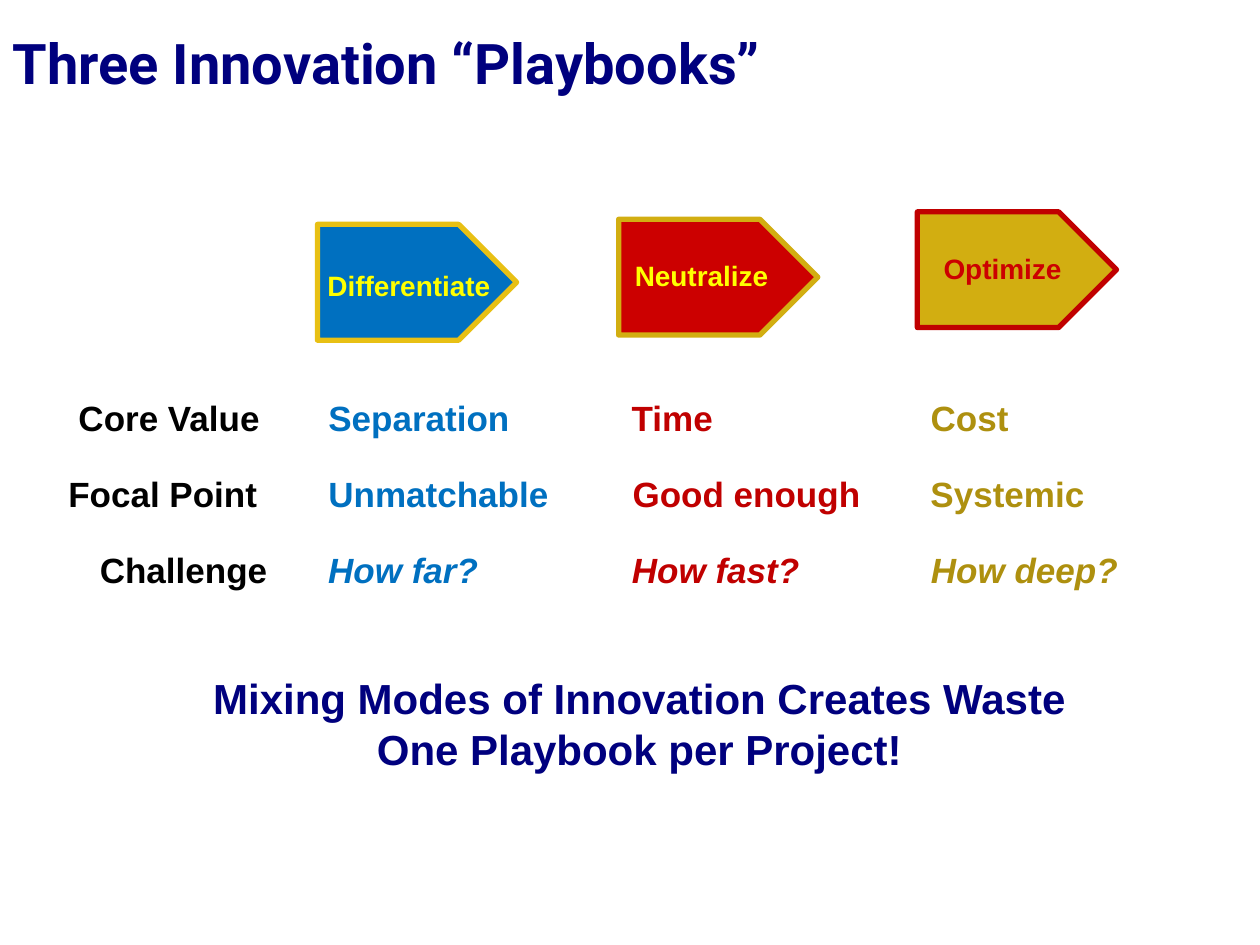
"""Build the slide comparing three innovation playbooks."""
import pptx
import pptx.dml.color
import pptx.enum.shapes
import pptx.enum.text
import pptx.oxml.ns
import pptx.util
from lxml import etree

Pt = pptx.util.Pt
ALIGN = pptx.enum.text.PP_ALIGN


def rgb(value):
    return pptx.dml.color.RGBColor.from_string(value)


def add_label(shapes, text, left, top, width, height, size, color, align, italic=None):
    label = shapes.add_textbox(Pt(left), Pt(top), Pt(width), Pt(height))
    frame = label.text_frame
    frame.text = text
    frame.word_wrap = False
    frame.auto_size = pptx.enum.text.MSO_AUTO_SIZE.SHAPE_TO_FIT_TEXT
    for paragraph in frame.paragraphs:
        paragraph.alignment = align
        for run in paragraph.runs:
            run.font.name = "Arial"
            run.font.size = Pt(size)
            run.font.bold = True
            run.font.italic = italic
            run.font.color.rgb = rgb(color)


deck = pptx.Presentation()
deck.slide_width, deck.slide_height = Pt(720), Pt(540)
slide = deck.slides.add_slide(deck.slide_layouts[5])

title = slide.shapes.title
title.left, title.top, title.width, title.height = Pt(0), Pt(17.3), Pt(672), Pt(77.8)
title.text_frame.text = "Three Innovation “Playbooks”"
title.text_frame.vertical_anchor = pptx.enum.text.MSO_ANCHOR.TOP
heading = title.text_frame.paragraphs[0]
heading.alignment = ALIGN.LEFT
heading.line_spacing = 0.9
heading_font = heading.runs[0].font
heading_font.name = "Roboto"
heading_font.size = Pt(32)
heading_font.bold = True
heading_font.color.rgb = rgb("00007E")

row_tops = [223.2, 266.4, 309.6]
criteria = [("Core Value", 36.7, 118.8), ("Focal Point", 31, 123.1), ("Challenge", 49, 110.9)]
for top, (criterion, left, width) in zip(row_tops, criteria):
    add_label(slide.shapes, criterion, left, top, width, 31.5, 20, "000000", ALIGN.RIGHT)

playbooks = [
    (180, "0070C0", [("Separation", 118.8), ("Unmatchable", 141.1), ("How far?", 100.8)]),
    (353.5, "C00000", [("Time", 61.2), ("Good enough", 146.2), ("How fast?", 110.9)]),
    (524.2, "AE900F", [("Cost", 59.8), ("Systemic", 103), ("How deep?", 122.4)]),
]
for left, color, answers in playbooks:
    for top, (answer, width) in zip(row_tops, answers):
        italic = top == row_tops[-1]
        add_label(slide.shapes, answer, left, top, width, 31.5, 20, color, ALIGN.CENTER, italic)

modes = [
    ("Differentiate", 181.4, 128.2, "0070C0", "E8C014", 180, 149.8, 108.7, "FFFF00"),
    ("Neutralize", 353.5, 125.3, "CC0000", "D2AE11", 355.7, 144, 91.4, "FFFF00"),
    ("Optimize", 524.2, 121, "D2AE11", "C00000", 532.1, 140.4, 82.8, "CC0000"),
]
for mode, left, top, fill, border, text_left, text_top, text_width, text_color in modes:
    group = slide.shapes.add_group_shape()
    arrow = group.shapes.add_shape(
        pptx.enum.shapes.MSO_SHAPE.PENTAGON, Pt(left), Pt(top), Pt(113.8), Pt(66.2))
    arrow.shadow.inherit = False
    arrow.fill.solid()
    arrow.fill.fore_color.rgb = rgb(fill)
    arrow.line.color.rgb = rgb(border)
    arrow.line.width = Pt(3)
    outline = arrow.line._get_or_add_ln()
    etree.SubElement(outline, pptx.oxml.ns.qn("a:round"))
    add_label(group.shapes, mode, text_left, text_top, text_width, 26.6, 16, text_color, ALIGN.LEFT)

conclusion = "Mixing Modes of Innovation Creates Waste\nOne Playbook per Project!"
add_label(slide.shapes, conclusion, 112.3, 380.9, 506.2, 65.5, 24, "00007E", ALIGN.CENTER)

deck.save("out.pptx")
